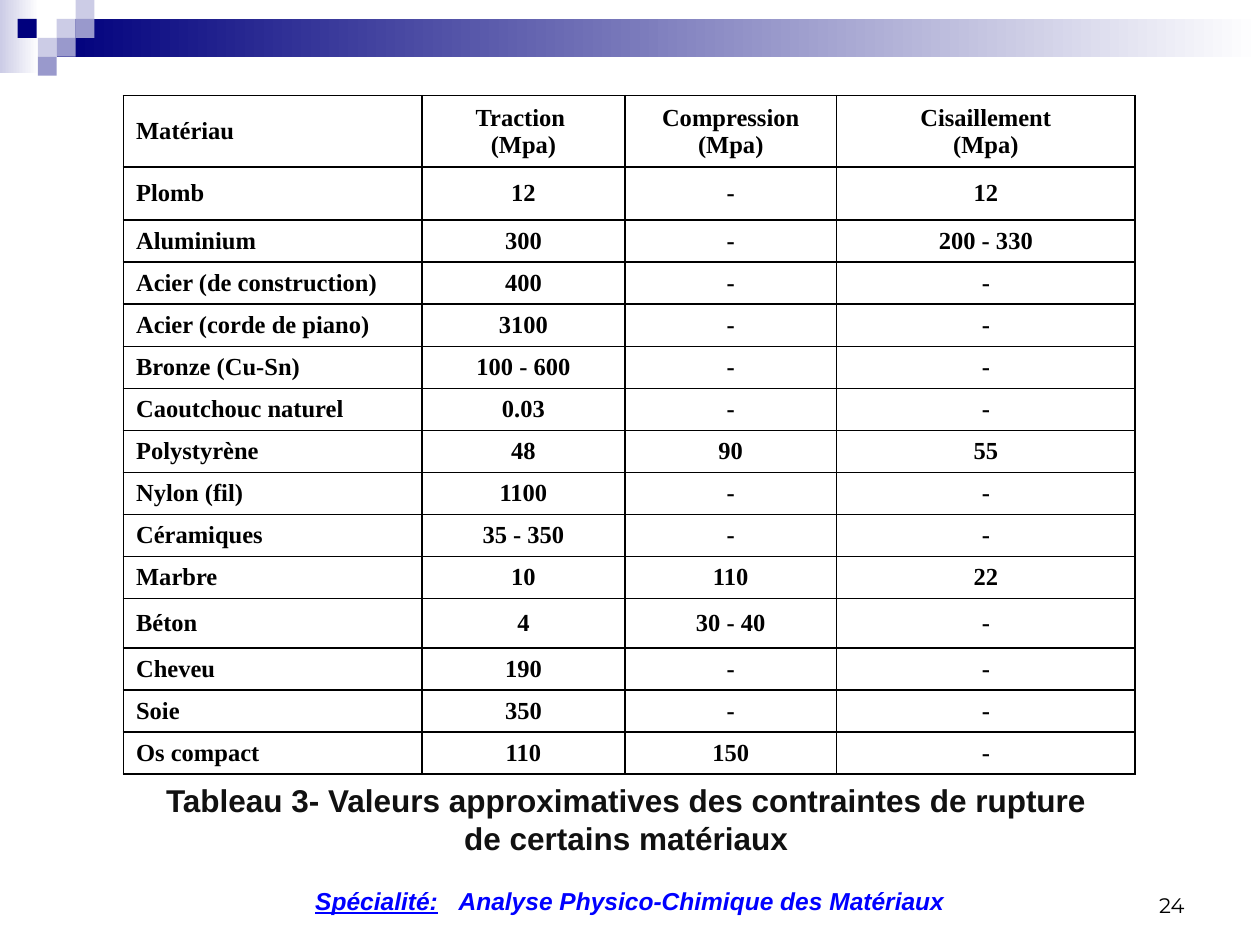
from lxml import etree
from pptx import Presentation
from pptx.dml.color import RGBColor
from pptx.enum.shapes import MSO_SHAPE
from pptx.enum.text import MSO_ANCHOR, PP_ALIGN
from pptx.oxml.ns import qn
from pptx.util import Inches, Pt

RECTANGLE = MSO_SHAPE.RECTANGLE
LEFT, CENTER, RIGHT = PP_ALIGN.LEFT, PP_ALIGN.CENTER, PP_ALIGN.RIGHT
TOP, MIDDLE, BOTTOM = MSO_ANCHOR.TOP, MSO_ANCHOR.MIDDLE, MSO_ANCHOR.BOTTOM

NAVY, LILAC, LAVENDER, WHITE, BLACK = "00007D", "9999CC", "CCCCE6", "FFFFFF", "000000"
SQUARE = 0.15
SQUARES = [
    (0.45, 0.15, LAVENDER),
    (0.6, 0, LAVENDER),
    (0.6, 0.15, LILAC),
    (0.3, 0.3, LAVENDER),
    (0.14, 0.15, NAVY),
    (0.45, 0.3, LILAC),
    (0.3, 0.45, LILAC),
]
COLUMN_WIDTHS = [2.37, 1.61, 1.68, 2.37]
ROW_HEIGHT = 0.33
TALL_ROWS = {0: 0.56, 1: 0.42, 11: 0.39}
STRENGTHS = [
    ("Matériau", "Traction \n(Mpa)", "Compression\n(Mpa)", "Cisaillement\n(Mpa)"),
    ("Plomb", "12", "-", "12"),
    ("Aluminium", "300", "-", "200 - 330"),
    ("Acier (de construction)", "400", "-", "-"),
    ("Acier (corde de piano)", "3100", "-", "-"),
    ("Bronze (Cu-Sn)", "100 - 600", "-", "-"),
    ("Caoutchouc naturel", "0.03", "-", "-"),
    ("Polystyrène", "48", "90", "55"),
    ("Nylon (fil)", "1100", "-", "-"),
    ("Céramiques", "35 - 350", "-", "-"),
    ("Marbre", "10", "110", "22"),
    ("Béton", "4", "30 - 40", "-"),
    ("Cheveu", "190", "-", "-"),
    ("Soie", "350", "-", "-"),
    ("Os compact", "110", "150", "-"),
]


def color(value):
    return RGBColor.from_string(value)


def add_run(paragraph, text, size=14, font="Arial", fill=BLACK, bold=False,
            italic=False, underline=False, tracking=0):
    run = paragraph.add_run()
    run.text = text
    run.font.size = Pt(size)
    run.font.name = font
    run.font.color.rgb = color(fill)
    run.font.bold = bold
    run.font.italic = italic
    run.font.underline = underline
    if tracking:
        run._r.get_or_add_rPr().set("spc", str(round(tracking * 100)))


def write_text(frame, text, align=LEFT, line_spacing=None, **style):
    for index, line in enumerate(text.split("\n")):
        paragraph = frame.add_paragraph() if index else frame.paragraphs[0]
        paragraph.alignment = align
        paragraph.line_spacing = line_spacing
        add_run(paragraph, line, **style)


def add_text_box(slide, left, top, width, height, anchor=TOP):
    frame = slide.shapes.add_textbox(
        Inches(left), Inches(top), Inches(width), Inches(height)).text_frame
    frame.word_wrap = True
    frame.vertical_anchor = anchor
    return frame


def add_rectangle(slide, left, top, width, height, *colors):
    shape = slide.shapes.add_shape(
        RECTANGLE, Inches(left), Inches(top), Inches(width), Inches(height))
    shape.shadow.inherit = False
    shape.line.fill.background()
    if len(colors) == 1:
        shape.fill.solid()
        shape.fill.fore_color.rgb = color(colors[0])
    else:
        shape.fill.gradient()
        shape.fill.gradient_angle = 0
        for stop, value in zip(shape.fill.gradient_stops, colors):
            stop.color.rgb = color(value)


def set_borders(cell, value, width):
    properties = cell._tc.get_or_add_tcPr()
    for index, side in enumerate(("lnL", "lnR", "lnT", "lnB")):
        line = etree.Element(qn(f"a:{side}"), w=str(Pt(width)))
        fill = etree.SubElement(line, qn("a:solidFill"))
        etree.SubElement(fill, qn("a:srgbClr"), val=value)
        properties.insert(index, line)


def add_strength_table(slide, left, top):
    heights = [TALL_ROWS.get(row, ROW_HEIGHT) for row in range(len(STRENGTHS))]
    table = slide.shapes.add_table(
        len(heights), len(COLUMN_WIDTHS), Inches(left), Inches(top),
        Inches(sum(COLUMN_WIDTHS)), Inches(sum(heights))).table
    table.first_row = False
    table.horz_banding = False
    for column, width in zip(table.columns, COLUMN_WIDTHS):
        column.width = Inches(width)
    for row, height, values in zip(table.rows, heights, STRENGTHS):
        row.height = Inches(height)
        for index, (cell, text) in enumerate(zip(row.cells, values)):
            cell.fill.background()
            cell.vertical_anchor = MIDDLE
            set_borders(cell, BLACK, 1)
            write_text(cell.text_frame, text, align=CENTER if index else LEFT,
                       font="Times New Roman", bold=True)


def add_banner(slide):
    add_rectangle(slide, 0, 0, 0.31, 0.58, LAVENDER, WHITE)
    add_rectangle(slide, 0.45, 0.15, 9.55, 0.3, NAVY, WHITE)
    for left, top, fill in SQUARES:
        add_rectangle(slide, left, top, SQUARE, SQUARE, fill)


def add_footer(slide):
    number = add_text_box(slide, 7.17, 6.83, 2.33, 0.5, BOTTOM)
    write_text(number, "24", align=RIGHT, size=12, font="Montserrat")
    paragraph = add_text_box(slide, 0.02, 6.98, 9.96, 0.34).paragraphs[0]
    paragraph.alignment = CENTER
    style = {"fill": "0000FF", "bold": True, "italic": True}
    add_run(paragraph, "Spécialité:", underline=True, **style)
    add_run(paragraph, " ", tracking=7.8, **style)
    add_run(paragraph, "Analyse Physico-Chimique des Matériaux", **style)


def main():
    presentation = Presentation()
    presentation.slide_width = Inches(10)
    presentation.slide_height = Inches(7.5)
    slide = presentation.slides.add_slide(presentation.slide_layouts[6])
    add_banner(slide)
    add_footer(slide)
    caption = add_text_box(slide, 0, 6.15, 9.94, 0.7)
    write_text(caption, "Tableau 3- Valeurs approximatives des contraintes de rupture\n"
               "de certains matériaux", align=CENTER, line_spacing=Pt(21.6),
               size=18, fill="111111", bold=True)
    add_strength_table(slide, 0.98, 0.76)
    presentation.save("out.pptx")


if __name__ == "__main__":
    main()
